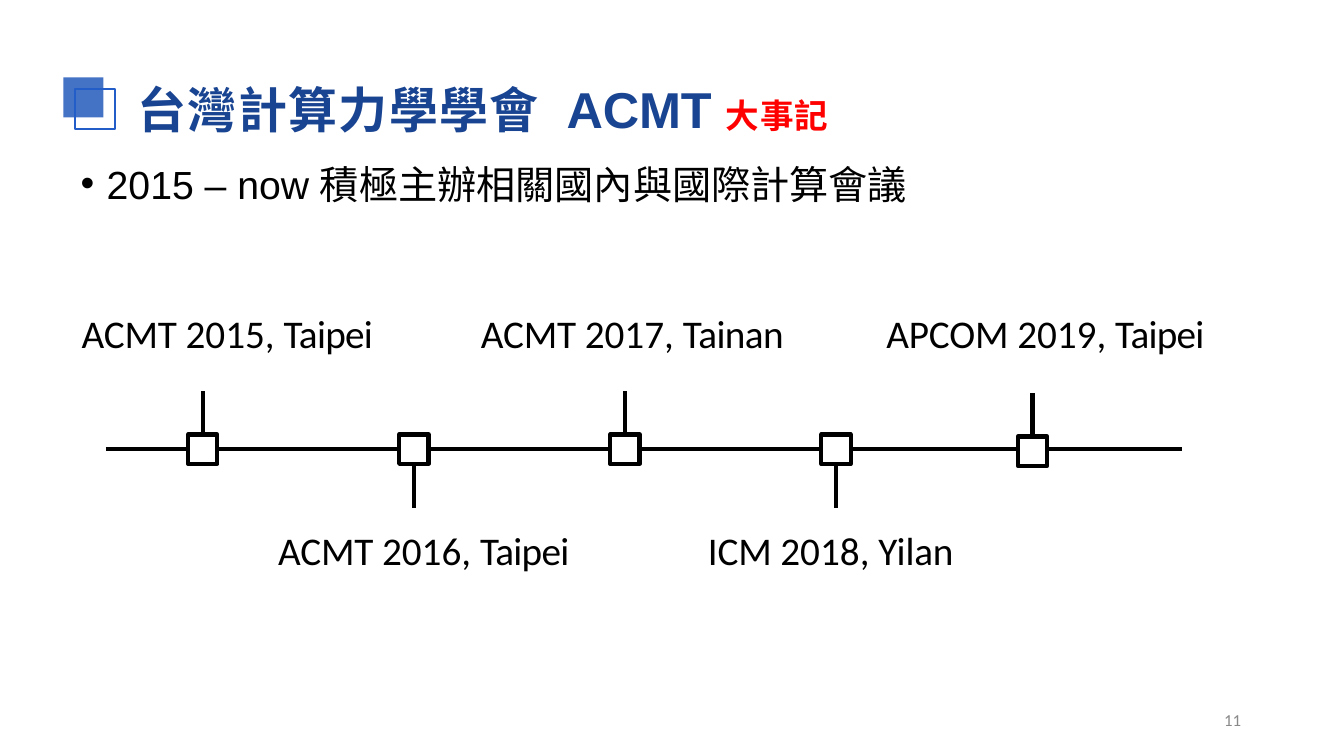
from dataclasses import dataclass

from lxml.etree import SubElement
from pptx import Presentation
from pptx.dml.color import RGBColor
from pptx.enum.shapes import MSO_CONNECTOR, MSO_SHAPE
from pptx.oxml.ns import qn
from pptx.util import Cm, Pt


@dataclass(frozen=True)
class Theme:
    black: RGBColor = RGBColor(0x00, 0x00, 0x00)
    white: RGBColor = RGBColor(0xFF, 0xFF, 0xFF)
    title: RGBColor = RGBColor(0x19, 0x44, 0x91)
    accent: RGBColor = RGBColor(0xFF, 0x00, 0x00)
    block: RGBColor = RGBColor(0x44, 0x72, 0xC4)
    outline: RGBColor = RGBColor(0x22, 0x5D, 0xC8)
    grey: RGBColor = RGBColor(0x89, 0x89, 0x89)
    heading: str = "Arial"
    label: str = "Calibri"
    chinese: str = "Noto Sans CJK SC"
    title_size: float = 36
    title_chinese_size: float = 35
    tag_size: float = 24
    body_size: float = 28
    number_size: float = 12
    timeline_width: float = 3
    outline_width: float = 1.5


THEME = Theme()

AXIS_LEFT, AXIS_RIGHT, AXIS_Y = 2.67, 29.78, 11.32
FIRST_X, PITCH = 5.11, 5.32
MARKER, STEM = 0.74, 1.1
LABEL_ABOVE, LABEL_BELOW = 7.76, 13.23

# Name, year, place, place letter spacing, label left, label width
EVENTS = [
    ("ACMT ", "2015, ", "Taipei", -0.5, 2.03, 7.54),
    ("ACMT ", "2016, ", "Taipei", -0.5, 6.98, 7.54),
    ("ACMT ", "2017, ", "Tainan", -0.4, 12.09, 7.8),
    ("ICM ", "2018, ", "Yilan", -0.1, 17.81, 6.3),
    ("APCOM ", "2019, ", "Taipei", -0.5, 22.31, 8.2),
]
# The last marker stands off the even pitch
LAST_SHIFT_X, LAST_SHIFT_Y = -0.37, 0.05


def add_text_box(slide, left, top, width, height, wrap=False):
    """Add a box without side insets and return its first paragraph."""
    frame = slide.shapes.add_textbox(Cm(left), Cm(top), Cm(width), Cm(height)).text_frame
    frame.word_wrap = wrap
    frame.margin_left = frame.margin_right = frame.margin_bottom = 0
    frame.margin_top = Cm(0.03)
    return frame.paragraphs[0]


def set_font(font, name, size, color, bold=False):
    font.name, font.size, font.bold = name, Pt(size), bold
    font.color.rgb = color


def add_run(paragraph, text, spacing=0, chinese=False):
    """Add a run with letter spacing in points and, if asked, the Chinese typeface."""
    run = paragraph.add_run()
    run.text = text
    properties = run.font._element
    if spacing:
        properties.set("spc", str(round(spacing * 100)))
    if chinese:
        run.font.name = THEME.chinese
        SubElement(properties, qn("a:ea")).set("typeface", THEME.chinese)
    return run


def add_tab_stop(paragraph, position):
    stops = SubElement(paragraph._p.get_or_add_pPr(), qn("a:tabLst"))
    SubElement(stops, qn("a:tab"), pos=str(Cm(position)), algn="l")


def add_bullet(paragraph, indent):
    properties = paragraph._p.get_or_add_pPr()
    properties.set("marL", str(Cm(indent)))
    properties.set("indent", str(-Cm(indent)))
    SubElement(properties, qn("a:buFont")).set("typeface", THEME.heading)
    SubElement(properties, qn("a:buChar")).set("char", "•")


def add_square(slide, left, top, size, fill=None, line=None, width=0):
    square = slide.shapes.add_shape(
        MSO_SHAPE.RECTANGLE, Cm(left), Cm(top), Cm(size), Cm(size))
    square.shadow.inherit = False
    if fill is None:
        square.fill.background()
    else:
        square.fill.solid()
        square.fill.fore_color.rgb = fill
    if line is None:
        square.line.fill.background()
    else:
        square.line.color.rgb = line
        square.line.width = Pt(width)
    return square


def add_line(slide, x1, y1, x2, y2):
    connector = slide.shapes.add_connector(
        MSO_CONNECTOR.STRAIGHT, Cm(x1), Cm(y1), Cm(x2), Cm(y2))
    connector.line.color.rgb = THEME.black
    connector.line.width = Pt(THEME.timeline_width)
    SubElement(connector._element.spPr, qn("a:effectLst"))


def add_title(slide):
    add_square(slide, 1.6, 1.95, 1.01, fill=THEME.block)
    add_square(slide, 1.89, 2.25, 1.01, line=THEME.outline, width=THEME.outline_width)
    paragraph = add_text_box(slide, 3.43, 1.95, 17.86, 1.6)
    paragraph._p.get_or_add_pPr().set("marL", str(Cm(0.03)))
    add_tab_stop(paragraph, 10.82)
    set_font(paragraph.font, THEME.heading, THEME.title_size, THEME.title, bold=True)
    name = add_run(paragraph, "台灣計算力學學會\t", 1, chinese=True)
    name.font.size = Pt(THEME.title_chinese_size)
    add_run(paragraph, "ACMT ", -0.1)
    tag = add_run(paragraph, "大事記", 0.8, chinese=True)
    tag.font.size = Pt(THEME.tag_size)
    tag.font.color.rgb = THEME.accent


def add_summary(slide):
    paragraph = add_text_box(slide, 2.03, 4.0, 20.9, 1.24, wrap=True)
    add_bullet(paragraph, 0.66)
    set_font(paragraph.font, THEME.heading, THEME.body_size, THEME.black)
    add_run(paragraph, "2015 – now ")
    add_run(paragraph, "積極主辦相關國內與國際計算會議", chinese=True).font.size = Pt(THEME.body_size)


def add_event(slide, x, y, above, event):
    """Add a marker centred on x, y with its stem and its label."""
    name, year, place, spacing, left, width = event
    side = -1 if above else 1
    edge = y + side * MARKER / 2
    add_line(slide, x, edge, x, edge + side * STEM)
    marker = add_square(slide, x - MARKER / 2, y - MARKER / 2, MARKER,
                        THEME.white, THEME.black, THEME.timeline_width)
    SubElement(marker.line._get_or_add_ln(), qn("a:round"))
    top = LABEL_ABOVE if above else LABEL_BELOW
    paragraph = add_text_box(slide, left, top, width, 1.24)
    paragraph._p.get_or_add_pPr().set("marL", str(Cm(0.03)))
    set_font(paragraph.font, THEME.label, THEME.body_size, THEME.black)
    for text, run_spacing in ((name, -0.1), (year, 0), (place, spacing)):
        add_run(paragraph, text, run_spacing)


def add_timeline(slide):
    centres = [FIRST_X + index * PITCH for index in range(len(EVENTS))]
    centres[-1] += LAST_SHIFT_X
    # The first stretch of the axis runs behind the first marker
    starts = [AXIS_LEFT] + [x + MARKER / 2 for x in centres[1:]]
    ends = [x - MARKER / 2 for x in centres[1:]] + [AXIS_RIGHT]
    for start, end in zip(starts, ends):
        add_line(slide, start, AXIS_Y, end, AXIS_Y)
    for index, (x, event) in enumerate(zip(centres, EVENTS)):
        y = AXIS_Y + (LAST_SHIFT_Y if event is EVENTS[-1] else 0)
        add_event(slide, x, y, index % 2 == 0, event)


def add_page_number(slide, number):
    paragraph = add_text_box(slide, 30.75, 17.86, 0.9, 0.58)
    paragraph._p.get_or_add_pPr().set("marL", str(Cm(0.1)))
    set_font(paragraph.font, THEME.label, THEME.number_size, THEME.grey)
    add_run(paragraph, str(number))


def main():
    presentation = Presentation()
    presentation.slide_width, presentation.slide_height = Cm(33.87), Cm(19.05)
    slide = presentation.slides.add_slide(presentation.slide_layouts[6])
    add_title(slide)
    add_summary(slide)
    add_timeline(slide)
    add_page_number(slide, 11)
    presentation.save("out.pptx")


if __name__ == "__main__":
    main()
